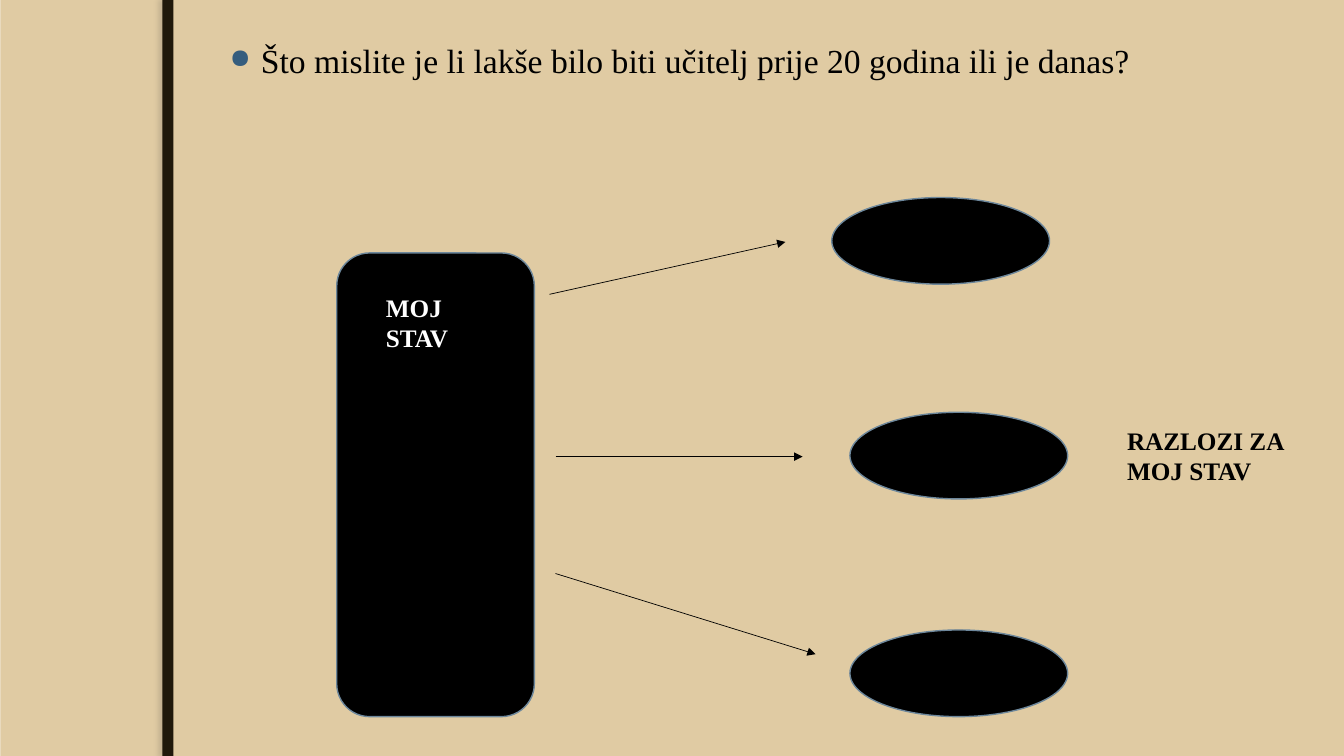
from lxml import etree
from pptx import Presentation
from pptx.dml.color import RGBColor
from pptx.enum.shapes import MSO_CONNECTOR, MSO_SHAPE
from pptx.enum.text import MSO_AUTO_SIZE
from pptx.oxml.ns import qn
from pptx.util import Inches, Pt

RECTANGLE = MSO_SHAPE.RECTANGLE
ROUNDED = MSO_SHAPE.ROUNDED_RECTANGLE
OVAL = MSO_SHAPE.OVAL
STRAIGHT = MSO_CONNECTOR.STRAIGHT
FIT_SHAPE = MSO_AUTO_SIZE.SHAPE_TO_FIT_TEXT
NO_FIT = MSO_AUTO_SIZE.NONE


def color(value):
    return RGBColor.from_string(value)


def add_element(parent, tag, **attributes):
    element = etree.SubElement(parent, qn(tag))
    for key, value in attributes.items():
        element.set(key, str(value))
    return element


class SlideBuilder:
    font = "Times New Roman"
    ink = "000000"
    outline = "6D879B"
    bullet_color = "355D7E"

    def __init__(self, slide):
        self.slide = slide

    def background(self, value):
        fill = self.slide.background.fill
        fill.solid()
        fill.fore_color.rgb = color(value)

    def shape(self, kind, box, fill, outline=None):
        shape = self.slide.shapes.add_shape(kind, *map(Inches, box))
        shape.shadow.inherit = False
        shape.fill.solid()
        shape.fill.fore_color.rgb = color(fill)
        if outline:
            shape.line.color.rgb = color(outline)
            shape.line.width = Pt(1)
        else:
            shape.line.fill.background()
        return shape

    def shadow(self, shape, value, opacity, blur, distance, angle):
        effects = shape._element.spPr.find(qn("a:effectLst"))
        outer = add_element(effects, "a:outerShdw", blurRad=Pt(blur), dist=Pt(distance),
                            dir=angle * 60000, algn="ctr", rotWithShape=0)
        tint = add_element(outer, "a:srgbClr", val=value)
        add_element(tint, "a:alpha", val=opacity * 1000)

    def arrow(self, start, end):
        arrow = self.slide.shapes.add_connector(STRAIGHT, *map(Inches, start + end))
        arrow.line.color.rgb = color(self.ink)
        arrow.line.width = Pt(0.5)
        add_element(arrow.line._get_or_add_ln(), "a:tailEnd", type="triangle")
        add_element(arrow._element.spPr, "a:effectLst")

    def text(self, box, words, size, value, bold=False, bullet=False):
        frame = self.slide.shapes.add_textbox(*map(Inches, box)).text_frame
        frame.word_wrap = True
        frame.auto_size = NO_FIT if bullet else FIT_SHAPE
        paragraph = frame.paragraphs[0]
        if bullet:
            self.bullet(paragraph)
        run = paragraph.add_run()
        run.text = words
        run.font.name = self.font
        run.font.size = Pt(size)
        run.font.bold = bold
        run.font.color.rgb = color(value)

    def bullet(self, paragraph):
        properties = paragraph._p.get_or_add_pPr()
        properties.set("marL", str(Inches(0.4)))
        properties.set("indent", str(Inches(-0.31)))
        tint = add_element(properties, "a:buClr")
        add_element(tint, "a:srgbClr", val=self.bullet_color)
        add_element(properties, "a:buSzPct", val=80000)
        add_element(properties, "a:buChar", char="●")


def main():
    presentation = Presentation()
    presentation.slide_width = Inches(13.33)
    presentation.slide_height = Inches(7.5)
    builder = SlideBuilder(presentation.slides.add_slide(presentation.slide_layouts[6]))

    builder.background("EBDDC3")
    builder.shape(RECTANGLE, (0.01, 0, 13.32, 7.5), "E0CBA3")
    stripe = builder.shape(RECTANGLE, (1.61, 0, 0.11, 7.5), "20190B")
    builder.shadow(stripe, "766E60", 25, 3, 3, 180)

    builder.text((2.09, 0.35, 10.93, 6.48),
                 "Što mislite je li lakše bilo biti učitelj prije 20 godina ili je danas?",
                 24, builder.ink, bullet=True)

    builder.shape(ROUNDED, (3.34, 2.51, 1.96, 4.6), builder.ink, builder.outline)
    for start, end in (
        ((5.45, 2.92), (7.79, 2.4)),
        ((5.51, 4.53), (7.96, 4.53)),
        ((5.51, 5.69), (8.09, 6.49)),
    ):
        builder.arrow(start, end)
    for left, top in ((8.25, 1.96), (8.43, 4.09), (8.43, 6.25)):
        builder.shape(OVAL, (left, top, 2.16, 0.86), builder.ink, builder.outline)

    builder.text((11.08, 4.17, 1.76, 0.71), "RAZLOZI ZA MOJ STAV", 18, builder.ink, bold=True)
    builder.text((3.73, 2.85, 1.36, 0.71), "MOJ STAV", 18, "FFFFFF", bold=True)

    presentation.save("out.pptx")


if __name__ == "__main__":
    main()
